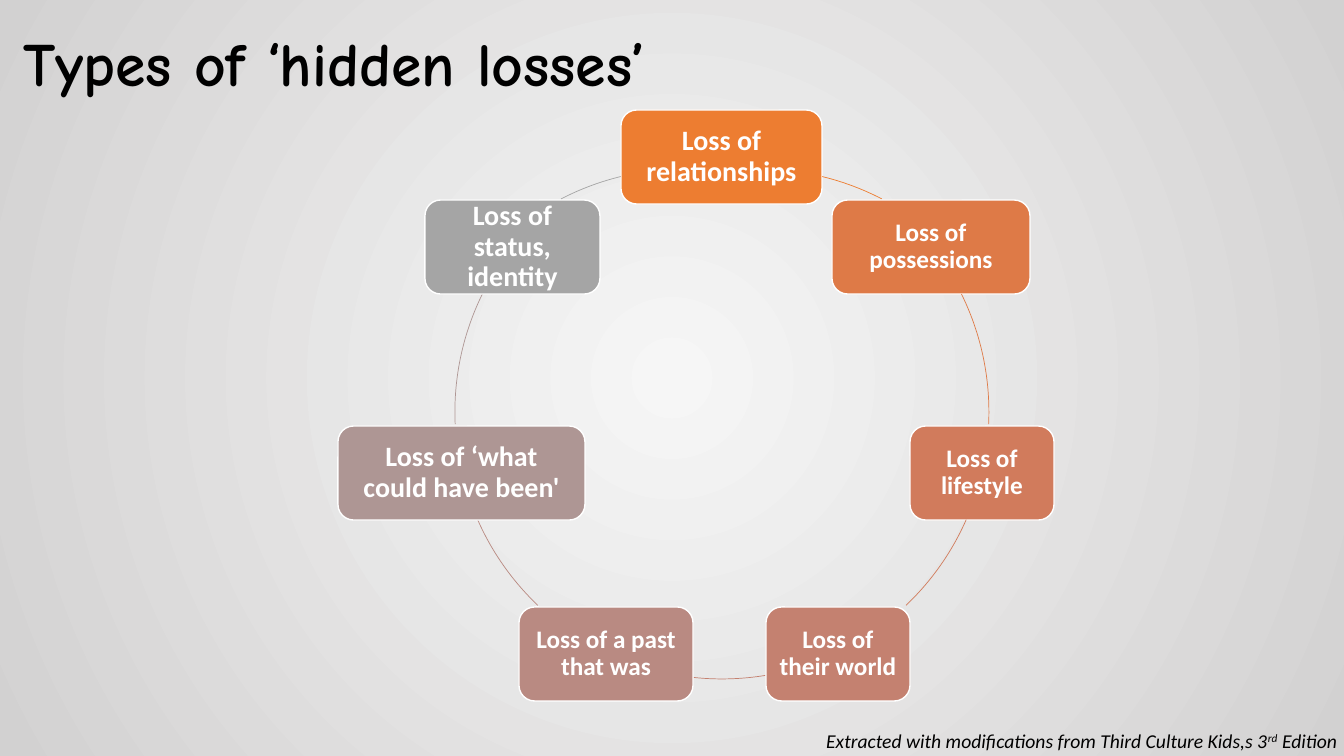
from lxml.etree import SubElement
from pptx import Presentation
from pptx.dml.color import RGBColor
from pptx.enum.shapes import MSO_SHAPE
from pptx.enum.text import MSO_ANCHOR, MSO_AUTO_SIZE, PP_ALIGN
from pptx.oxml.ns import qn
from pptx.util import Pt

# Content
TITLE = "Types of ‘hidden losses’"
SOURCE_RUNS = [
    ("Extracted with modifications from Third Culture Kids,s 3", False),
    ("rd", True),
    (" Edition", False),
]
BLACK = RGBColor(0x00, 0x00, 0x00)
WHITE = RGBColor(0xFF, 0xFF, 0xFF)
BG_CENTER = RGBColor(0xF6, 0xF6, 0xF6)
BG_EDGE = RGBColor(0xD2, 0xD1, 0xD1)

# Clockwise from the top: text, left, top, width, font size, colour
LOSSES = [
    ("Loss of relationships", 621, 110, 201, 20, RGBColor(0xED, 0x7D, 0x31)),
    ("Loss of possessions", 832, 200, 198, 18, RGBColor(0xDE, 0x7A, 0x47)),
    ("Loss of lifestyle", 910, 426, 144, 18, RGBColor(0xD1, 0x7B, 0x5C)),
    ("Loss of their world", 766, 607, 144, 18, RGBColor(0xC4, 0x81, 0x70)),
    ("Loss of a past that was", 519, 607, 174, 18, RGBColor(0xB9, 0x8A, 0x82)),
    ("Loss of ‘what could have been'", 338, 426, 247, 20, RGBColor(0xAE, 0x96, 0x94)),
    ("Loss of status, identity", 425, 200, 175, 20, RGBColor(0xA5, 0xA5, 0xA5)),
]
# Arc leaving each box: circle centre x, y, then start and end in degrees
ARCS = [
    (759, 436, 283.7, 297.4),
    (722, 412, 333.8, 2.6),
    (722, 412, 23.8, 46.4),
    (722, 412, 80.7, 96.1),
    (722, 412, 133.6, 156.2),
    (722, 412, 177.4, 206.2),
    (684, 436, 242.6, 256.3),
]
BOX_HEIGHT = 94
RADIUS = 267
ARC_UNIT = 0.6  # adjustment value per degree


def px(*lengths):
    return [round(n * 914400 / 100.8) for n in lengths]


def style(r, font, size, color, bold=False, italic=False):
    r.font.name, r.font.size = font, Pt(size)
    r.font.bold, r.font.italic = bold, italic
    r.font.color.rgb = color


prs = Presentation()
prs.slide_width, prs.slide_height = px(1344, 756)
s = prs.slides.add_slide(prs.slide_layouts[5])

# Radial background
fill = s.background.fill
fill.gradient()
for stop, color in zip(fill.gradient_stops, (BG_CENTER, BG_EDGE)):
    stop.color.rgb = color
grad = s.element.find(".//" + qn("a:gradFill"))
grad.remove(grad.find(qn("a:lin")))
radial = SubElement(grad, qn("a:path"))
radial.set("path", "circle")
center = SubElement(radial, qn("a:fillToRect"))
for side in "ltrb":
    center.set(side, "50000")

# Title
title = s.shapes.title
title.left, title.top, title.width, title.height = px(13, -6, 1159, 146)
tf = title.text_frame
tf.text = TITLE
tf.auto_size = MSO_AUTO_SIZE.NONE
tf.vertical_anchor = MSO_ANCHOR.MIDDLE
p = tf.paragraphs[0]
p.alignment, p.line_spacing = PP_ALIGN.LEFT, 0.9
style(p.runs[0], "Comic Neue", 44, BLACK, bold=True)

# Ring of losses
for (text, x, y, w, size, color), (cx, cy, start, end) in zip(LOSSES, ARCS):
    box = s.shapes.add_shape(MSO_SHAPE.ROUNDED_RECTANGLE, *px(x, y, w, BOX_HEIGHT))
    box.shadow.inherit = False
    box.fill.solid()
    box.fill.fore_color.rgb = color
    box.line.color.rgb = WHITE
    box.line.width = Pt(1)
    tf = box.text_frame
    tf.text = text
    tf.word_wrap = True
    tf.vertical_anchor = MSO_ANCHOR.MIDDLE
    inset = px(8 if size == 20 else 7)[0]
    tf.margin_left = tf.margin_right = tf.margin_top = tf.margin_bottom = inset
    p = tf.paragraphs[0]
    p.alignment, p.line_spacing = PP_ALIGN.CENTER, 0.9
    style(p.runs[0], "Calibri", size, WHITE, bold=True)

    arc = s.shapes.add_shape(
        MSO_SHAPE.ARC, *px(cx - RADIUS, cy - RADIUS, 2 * RADIUS, 2 * RADIUS))
    arc.adjustments[0] = start * ARC_UNIT
    arc.adjustments[1] = end * ARC_UNIT
    arc.shadow.inherit = False
    arc.fill.background()
    arc.line.color.rgb = color
    arc.line.width = Pt(0.5)

# Source note
note = s.shapes.add_textbox(*px(675, 724, 672, 34))
tf = note.text_frame
tf.word_wrap = True
p = tf.paragraphs[0]
p.alignment = PP_ALIGN.RIGHT
for text, raised in SOURCE_RUNS:
    r = p.add_run()
    r.text = text
    style(r, "Calibri", 14, BLACK, italic=True)
    if raised:
        r.font._element.set("baseline", "30000")

prs.save("out.pptx")
